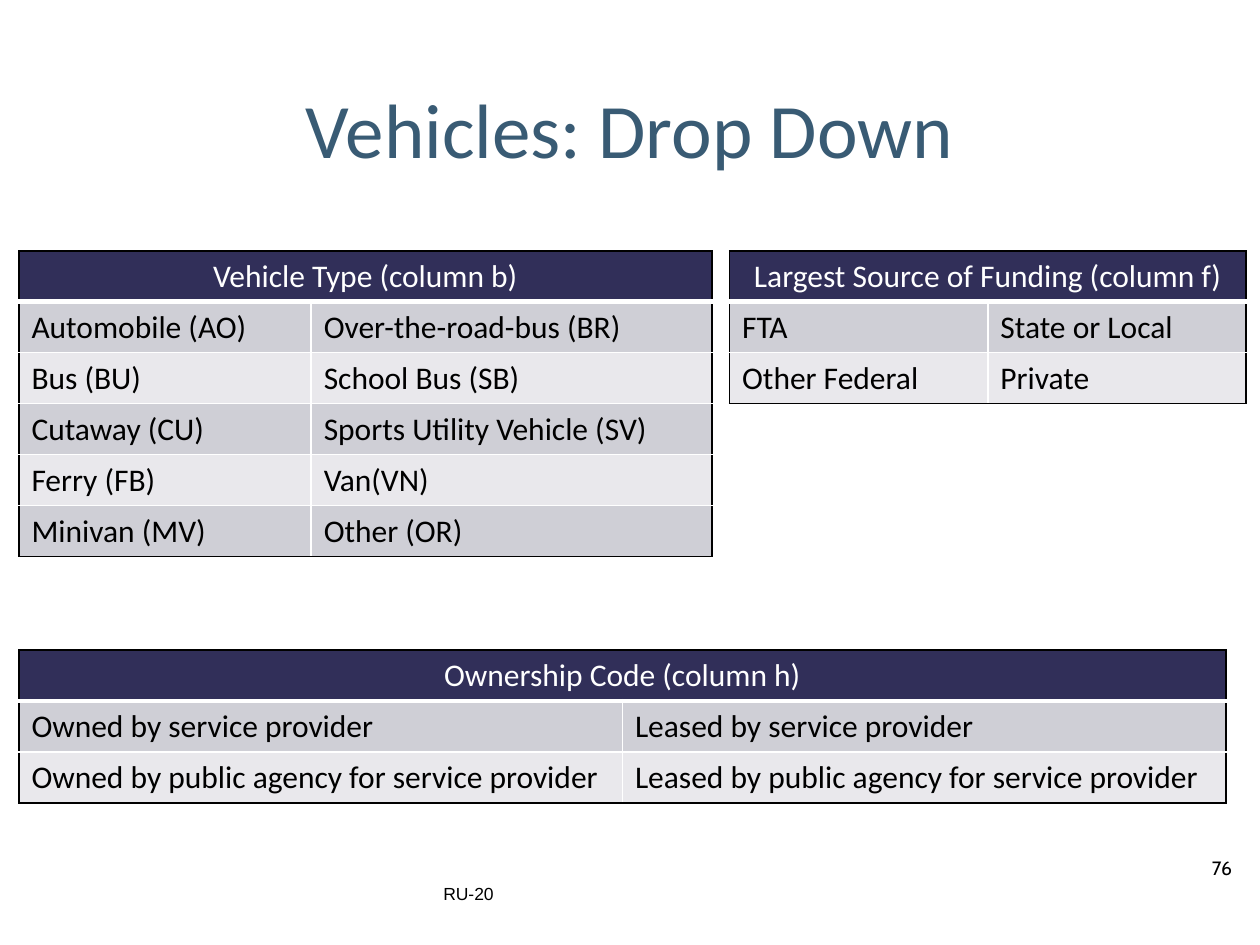
from lxml import etree
from pptx import Presentation
from pptx.dml.color import RGBColor
from pptx.enum.text import MSO_ANCHOR as Anchor, PP_ALIGN as Align
from pptx.oxml.ns import qn
from pptx.util import Inches, Pt

BLACK = RGBColor(0x00, 0x00, 0x00)
WHITE = RGBColor(0xFF, 0xFF, 0xFF)
TITLE_BLUE = RGBColor(0x39, 0x5B, 0x74)
HEADER_NAVY = RGBColor(0x31, 0x2F, 0x59)
BANDS = (RGBColor(0xCF, 0xCF, 0xD6), RGBColor(0xE9, 0xE8, 0xEC))

ROW_HEIGHT = 0.405
HEADER_FONT = {"name": "Calibri", "size": Pt(18), "color": WHITE}
BODY_FONT = {**HEADER_FONT, "color": BLACK}

VEHICLE_TYPES = [
    ("Automobile (AO)", "Over-the-road-bus (BR)"),
    ("Bus (BU)", "School Bus (SB)"),
    ("Cutaway (CU)", "Sports Utility Vehicle (SV)"),
    ("Ferry (FB)", "Van(VN)"),
    ("Minivan (MV)", "Other (OR)"),
]
FUNDING_SOURCES = [("FTA", "State or Local"), ("Other Federal", "Private")]
OWNERSHIP_CODES = [
    ("Owned by service provider", "Leased by service provider"),
    ("Owned by public agency for service provider",
     "Leased by public agency for service provider"),
]


def write_text(text_frame, text, font_format, align=Align.LEFT):
    paragraph = text_frame.paragraphs[0]
    paragraph.alignment = align
    run = paragraph.add_run()
    run.text = text
    for name, value in font_format.items():
        if name == "color":
            run.font.color.rgb = value
        else:
            setattr(run.font, name, value)


def add_text(slide, box, text, font_format, align=Align.LEFT, anchor=Anchor.TOP):
    text_frame = slide.shapes.add_textbox(*map(Inches, box)).text_frame
    text_frame.word_wrap = True
    text_frame.vertical_anchor = anchor
    write_text(text_frame, text, font_format, align)


def set_borders(cell, borders):
    """Draw cell edges from (side, colour, points), given in the order L, R, T, B."""
    properties = cell._tc.get_or_add_tcPr()
    for index, (side, color, points) in enumerate(borders):
        line = etree.Element(qn(f"a:ln{side}"), w=str(Pt(points)))
        fill = etree.SubElement(line, qn("a:solidFill"))
        etree.SubElement(fill, qn("a:srgbClr"), val=str(color))
        properties.insert(index, line)


def add_code_table(slide, left, top, widths, header, rows):
    """Add a two-column banded table with a merged header and a black outline."""
    row_count = len(rows) + 1
    frame = slide.shapes.add_table(
        row_count, 2, Inches(left), Inches(top),
        Inches(sum(widths)), Inches(row_count * ROW_HEIGHT))
    table = frame.table
    for column, width in zip(table.columns, widths):
        column.width = Inches(width)
    for row in table.rows:
        row.height = Inches(ROW_HEIGHT)
    table.cell(0, 0).merge(table.cell(0, 1))

    for row_index in range(row_count):
        is_header, is_last = row_index == 0, row_index == row_count - 1
        for column_index in range(2):
            cell = table.cell(row_index, column_index)
            cell.fill.solid()
            cell.fill.fore_color.rgb = (
                HEADER_NAVY if is_header else BANDS[(row_index - 1) % 2])
            set_borders(cell, [
                ("L", BLACK if is_header or column_index == 0 else WHITE, 1),
                ("R", BLACK if is_header or column_index == 1 else WHITE, 1),
                ("T", BLACK if is_header else WHITE, 3 if row_index == 1 else 1),
                ("B", BLACK if is_last else WHITE, 3 if is_header else 1),
            ])
            if not is_header:
                write_text(cell.text_frame, rows[row_index - 1][column_index], BODY_FONT)

    header_cell = table.cell(0, 0)
    header_cell.vertical_anchor = Anchor.MIDDLE
    write_text(header_cell.text_frame, header, HEADER_FONT, Align.CENTER)


def main():
    presentation = Presentation()
    presentation.slide_width, presentation.slide_height = Inches(10), Inches(7.5)
    slide = presentation.slides.add_slide(presentation.slide_layouts[6])

    add_text(slide, (0.5, 0.48, 9, 1.07), "Vehicles: Drop Down",
             {"name": "Calibri", "size": Pt(44), "color": TITLE_BLUE},
             Align.CENTER, Anchor.MIDDLE)
    add_text(slide, (9.52, 6.75, 0.43, 0.4), "76",
             {"name": "Cabin", "size": Pt(11), "color": BLACK})
    add_code_table(slide, 0.15, 1.99, (2.32, 3.18),
                   "Vehicle Type (column b)", VEHICLE_TYPES)
    add_code_table(slide, 5.79, 1.99, (2.05, 2.05),
                   "Largest Source of Funding (column f)", FUNDING_SOURCES)
    add_code_table(slide, 0.15, 5.16, (4.79, 4.79),
                   "Ownership Code (column h)", OWNERSHIP_CODES)
    add_text(slide, (3.42, 6.96, 3.17, 0.4), "RU-20",
             {"name": "Arial", "size": Pt(10), "color": BLACK})

    presentation.save("out.pptx")


if __name__ == "__main__":
    main()
